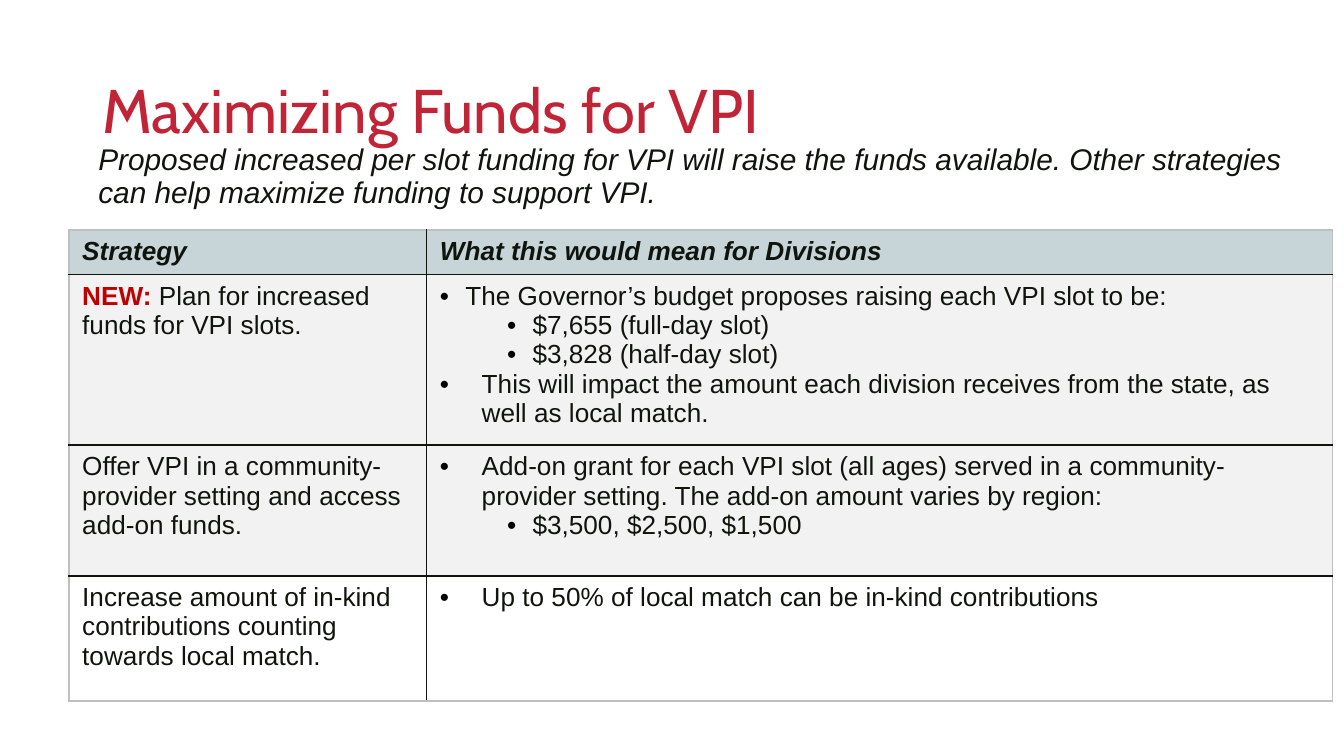
from lxml import etree
from pptx import Presentation
from pptx.dml.color import RGBColor
from pptx.enum.text import MSO_ANCHOR
from pptx.oxml import parse_xml
from pptx.oxml.ns import nsdecls, qn
from pptx.util import Cm, Pt

INK, RED, GREY = "0F150D", "C00000", "BFBFBF"


def rgb(color):
    return RGBColor.from_string(color)


def style(r, size, color=INK, bold=False, italic=False, name="Arial"):
    r.font.size, r.font.name = Pt(size), name
    r.font.bold, r.font.italic = bold, italic
    r.font.color.rgb = rgb(color)


prs = Presentation()
prs.slide_width, prs.slide_height = Cm(25.4), Cm(14.28)
s = prs.slides.add_slide(prs.slide_layouts[6])

# Title and introduction
headings = [
    ("Maximizing Funds for VPI", (1.75, 0.76, 21.9, 2.77), MSO_ANCHOR.MIDDLE, 0,
     dict(size=33, color="C12436", name="Cabin")),
    ("Proposed increased per slot funding for VPI will raise the funds available. "
     "Other strategies can help maximize funding to support VPI.",
     (1.3, 2.64, 23.88, 1.5), MSO_ANCHOR.TOP, 0.38, dict(size=16, italic=True)),
]
for text, box, anchor, indent, look in headings:
    tf = s.shapes.add_textbox(*[Cm(v) for v in box]).text_frame
    tf.word_wrap, tf.vertical_anchor = True, anchor
    tf.margin_left = tf.margin_right = Cm(0.18)
    tf.margin_top = tf.margin_bottom = Cm(0.1)
    p = tf.paragraphs[0]
    p.text, p.line_spacing = text, 0.9
    p._p.get_or_add_pPr().set("marL", str(Cm(indent)))
    style(p.runs[0], **look)

# Table content: strategy, then bullets as (text, level, left indent, hanging)
NEAR, FAR, SUB = (0, 0.48, 0.48), (0, 0.79, 0.79), (1, 1.75, 0.48)
rows = [
    ("Plan for increased funds for VPI slots.", "F2F2F2", [
        ("The Governor’s budget proposes raising each VPI slot to be:", NEAR),
        ("$7,655 (full-day slot)", SUB),
        ("$3,828 (half-day slot)", SUB),
        ("This will impact the amount each division receives from the state, "
         "as well as local match.", FAR)]),
    ("Offer VPI in a community-provider setting and access add-on funds.", "F2F2F2", [
        ("Add-on grant for each VPI slot (all ages) served in a community-provider "
         "setting. The add-on amount varies by region:", FAR),
        ("$3,500, $2,500, $1,500", SUB)]),
    ("Increase amount of in-kind contributions counting towards local match.", "FFFFFF", [
        ("Up to 50% of local match can be in-kind contributions", FAR)]),
]
col_widths, row_heights = (6.76, 17.12), (0.8, 3.04, 2.47, 2.36)
table = s.shapes.add_table(4, 2, Cm(1.3), Cm(4.34), Cm(sum(col_widths)),
                           Cm(sum(row_heights))).table
table.first_row = table.horz_banding = False
for col, width in zip(table.columns, col_widths):
    col.width = Cm(width)
for row, height in zip(table.rows, row_heights):
    row.height = Cm(height)

# Header row
for j, text in enumerate(("Strategy", "What this would mean for Divisions")):
    p = table.cell(0, j).text_frame.paragraphs[0]
    p.text = text
    style(p.runs[0], 14, bold=True, italic=True)

# Strategy rows
for i, (strategy, fill, bullets) in enumerate(rows, 1):
    p = table.cell(i, 0).text_frame.paragraphs[0]
    if i == 1:
        r = p.add_run()
        r.text = "NEW: "
        style(r, 14, RED, bold=True)
    r = p.add_run()
    r.text = strategy
    style(r, 14)

    tf = table.cell(i, 1).text_frame
    tf.text = "\n".join(text for text, _ in bullets)
    for p, (_, (level, left, hang)) in zip(tf.paragraphs, bullets):
        p.level = level
        pPr = p._p.get_or_add_pPr()
        pPr.set("marL", str(Cm(left)))
        pPr.set("indent", str(-Cm(hang)))
        clr = etree.SubElement(pPr, qn("a:buClr"))
        etree.SubElement(clr, qn("a:srgbClr"), val="000000")
        etree.SubElement(pPr, qn("a:buFont"), typeface="Arial")
        etree.SubElement(pPr, qn("a:buChar"), char="•")
        style(p.runs[0], 14)

# Cell borders (grey outside, dark inside) and fills
for i in range(4):
    for j in range(2):
        cell = table.cell(i, j)
        outer = {"L": j == 0, "R": j == 1, "T": i == 0, "B": i == 3}
        for side, outside in outer.items():
            cell._tc.get_or_add_tcPr().append(parse_xml(
                f'<a:ln{side} {nsdecls("a")} w="{Pt(1)}"><a:solidFill>'
                f'<a:srgbClr val="{GREY if outside else INK}"/>'
                f'</a:solidFill></a:ln{side}>'))
        cell.fill.solid()
        cell.fill.fore_color.rgb = rgb(rows[i - 1][1] if i else "C7D4D8")

prs.save("out.pptx")
